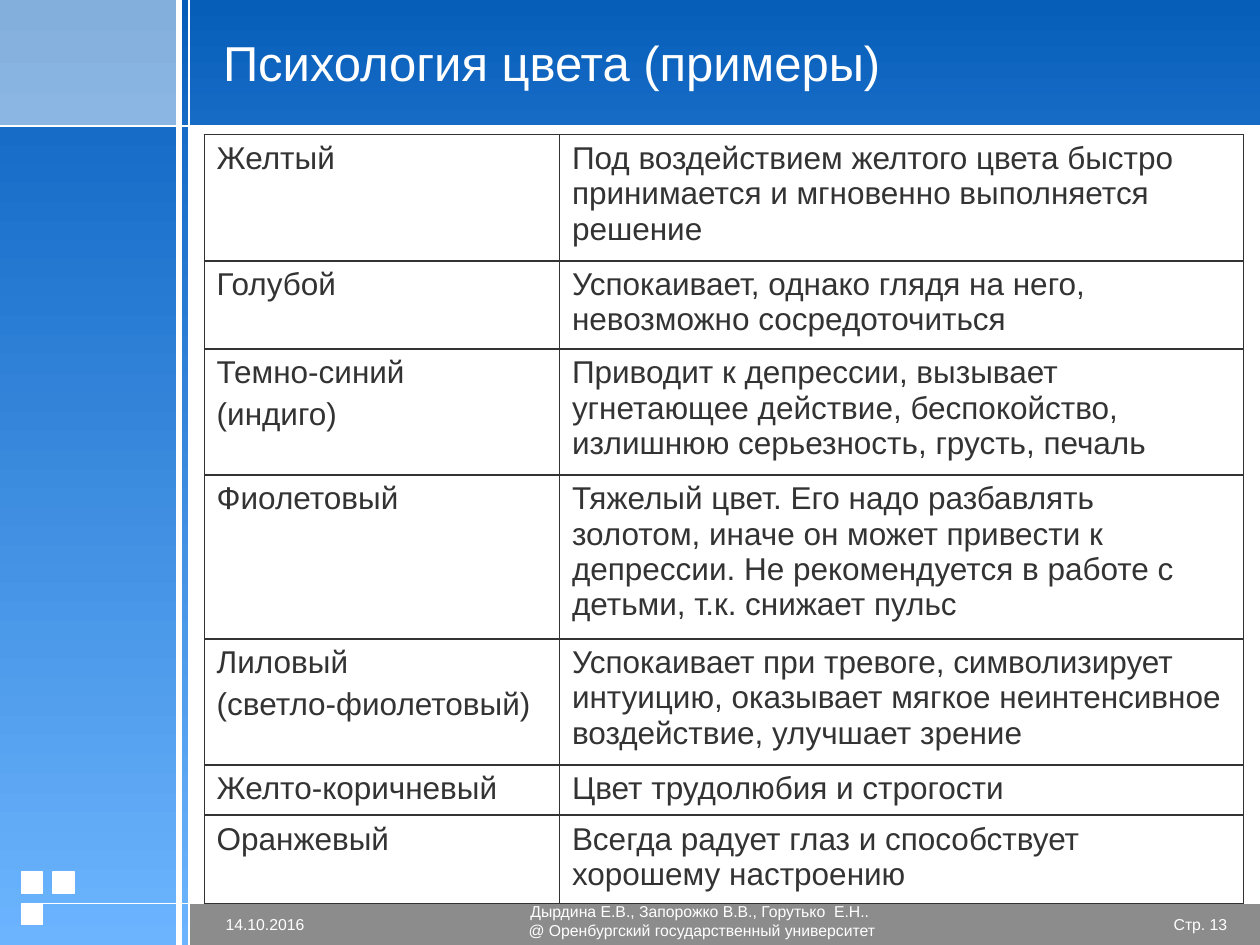
from lxml import etree
from pptx import Presentation
from pptx.dml.color import RGBColor
from pptx.enum.shapes import MSO_CONNECTOR, MSO_SHAPE
from pptx.enum.text import MSO_ANCHOR, MSO_AUTO_SIZE, PP_ALIGN
from pptx.oxml.ns import qn
from pptx.util import Inches, Pt

RECT = MSO_SHAPE.RECTANGLE
LINE = MSO_CONNECTOR.STRAIGHT
MIDDLE, TOP = MSO_ANCHOR.MIDDLE, MSO_ANCHOR.TOP
LEFT, CENTER, RIGHT = PP_ALIGN.LEFT, PP_ALIGN.CENTER, PP_ALIGN.RIGHT
NO_FIT = MSO_AUTO_SIZE.NONE

WHITE = RGBColor(0xFF, 0xFF, 0xFF)
INK = RGBColor(0x33, 0x33, 0x33)
GRAY = RGBColor(0x8C, 0x8C, 0x8C)
PALE = RGBColor(0xBD, 0xE0, 0xFF)
CORNER = (RGBColor(0x83, 0xAF, 0xDC), RGBColor(0x8B, 0xB6, 0xE3))
SIDE = (RGBColor(0x16, 0x6C, 0xC7), RGBColor(0x6C, 0xB4, 0xFE))
HEAD = (RGBColor(0x06, 0x5E, 0xB8), RGBColor(0x16, 0x6B, 0xC5))

FONT = "Arial"
WIDE, HIGH = 10, 7.5
# Grid lines of the frame: side bar, header and footer
BAR, EDGE, TOP_Y, FOOT = 1.42, 1.5, 1, 7.17
TILE, STEP = 0.17, 0.25
COLS = (2.82, 5.43)
ROWS = (
    (1, "Желтый", "Под воздействием желтого цвета быстро принимается и "
     "мгновенно выполняется решение"),
    (0.7, "Голубой", "Успокаивает, однако глядя на него, невозможно "
     "сосредоточиться"),
    (1, "Темно-синий\n(индиго)", "Приводит к депрессии, вызывает угнетающее "
     "действие, беспокойство, излишнюю серьезность, грусть, печаль"),
    (1.3, "Фиолетовый", "Тяжелый цвет. Его надо разбавлять золотом, иначе он "
     "может привести к депрессии. Не рекомендуется в работе с детьми, "
     "т.к. снижает пульс"),
    (1, "Лиловый\n(светло-фиолетовый)", "Успокаивает при тревоге, "
     "символизирует интуицию, оказывает мягкое неинтенсивное воздействие, "
     "улучшает зрение"),
    (0.4, "Желто-коричневый", "Цвет трудолюбия и строгости"),
    (0.7, "Оранжевый", "Всегда радует глаз и способствует хорошему настроению"),
)


def box(x, y, w, h):
    return [Inches(v) for v in (x, y, w, h)]


def write(frame, text, size, color, align=LEFT, gap=0):
    frame.word_wrap = True
    for i, line in enumerate(text.split("\n")):
        para = frame.add_paragraph() if i else frame.paragraphs[0]
        para.alignment = align
        para.space_before = Pt(gap)
        run = para.add_run()
        run.text = line
        run.font.name = FONT
        run.font.size = Pt(size)
        run.font.color.rgb = color


def panel(slide, place, color, edge=None):
    """Plain rectangle; a pair of colours makes a downward gradient."""
    shape = slide.shapes.add_shape(RECT, *box(*place))
    shape.shadow.inherit = False
    if isinstance(color, RGBColor):
        shape.fill.solid()
        shape.fill.fore_color.rgb = color
    else:
        shape.fill.gradient()
        shape.fill.gradient_angle = 270
        for stop, tone in zip(shape.fill.gradient_stops, color):
            stop.color.rgb = tone
    if edge:
        shape.line.color.rgb = edge
        shape.line.width = Pt(0.75)
    else:
        shape.line.fill.background()


def rule(slide, ends, width):
    line = slide.shapes.add_connector(LINE, *box(*ends))
    line.line.color.rgb = WHITE
    line.line.width = Pt(width)
    etree.SubElement(line.element.spPr, qn("a:effectLst"))


def label(slide, place, text, align):
    frame = slide.shapes.add_textbox(*box(*place)).text_frame
    frame.margin_left = frame.margin_right = 0
    frame.margin_top = frame.margin_bottom = 0
    frame.vertical_anchor = MIDDLE
    write(frame, text, 9, WHITE, align)


def border(cell, widths):
    props = cell._tc.get_or_add_tcPr()
    for side, width in zip("LRTB", widths):
        line = etree.SubElement(props, qn("a:ln" + side), w=str(Pt(width)))
        fill = etree.SubElement(line, qn("a:solidFill"))
        etree.SubElement(fill, qn("a:srgbClr"), val=str(INK))


def color_table(slide):
    place = box(1.62, 1.07, sum(COLS), sum(row[0] for row in ROWS))
    table = slide.shapes.add_table(len(ROWS), len(COLS), *place).table
    table.first_row = table.horz_banding = False
    for col, width in zip(table.columns, COLS):
        col.width = Inches(width)
    last = len(ROWS) - 1
    for r, (height, *texts) in enumerate(ROWS):
        table.rows[r].height = Inches(height)
        for c, text in enumerate(texts):
            cell = table.cell(r, c)
            # Thin lines outside, thicker lines inside
            outer = (c == 0, c == 1, r == 0, r == last)
            border(cell, [0.5 if out else 1 for out in outer])
            cell.fill.background()
            cell.vertical_anchor = TOP
            write(cell.text_frame, text, 18, INK, gap=3.6)


def backdrop(slide):
    slide.background.fill.solid()
    slide.background.fill.fore_color.rgb = PALE
    # Panels
    panel(slide, (EDGE, TOP_Y, WIDE - EDGE, FOOT - TOP_Y), WHITE)
    panel(slide, (EDGE, FOOT, WIDE - EDGE, HIGH - FOOT), GRAY)
    panel(slide, (0, 0, EDGE, TOP_Y), CORNER)
    panel(slide, (0, TOP_Y, EDGE, HIGH - TOP_Y), SIDE)
    panel(slide, (BAR, 0, WIDE - BAR, TOP_Y), HEAD)
    # Corner tiles
    for col, row in ((0, 1), (0, 0), (1, 0)):
        panel(slide, (TILE + col * STEP, 6.92 + row * STEP, TILE, TILE),
              WHITE, WHITE)
    # Dividing lines
    rule(slide, (EDGE, 0, EDGE, HIGH), 1)
    rule(slide, (BAR, 0, BAR, HIGH), 3)
    rule(slide, (WIDE, TOP_Y, 0, TOP_Y), 1)
    rule(slide, (WIDE, FOOT, TILE, FOOT), 1)


def heading(slide, text):
    title = slide.shapes.title
    title.left, title.top, title.width, title.height = box(1.67, 0.08, 8.17, 0.83)
    frame = title.text_frame
    frame.auto_size = NO_FIT
    frame.vertical_anchor = MIDDLE
    write(frame, text, 28, WHITE)
    # Bring the title in front of the panels
    title.element.getparent().append(title.element)


def main():
    deck = Presentation()
    deck.slide_width, deck.slide_height = Inches(WIDE), Inches(HIGH)
    slide = deck.slides.add_slide(deck.slide_layouts[5])
    backdrop(slide)
    # Footer
    label(slide, (9.17, 7.25, 0.57, 0.17), "Стр. 13", RIGHT)
    label(slide, (1.79, 7.25, 1.21, 0.17), "14.10.2016", LEFT)
    label(slide, (2.72, 7, 5.7, 0.61),
          "Дырдина Е.В., Запорожко В.В., Горутько  Е.Н.. \n"
          "@ Оренбургский государственный университет", CENTER)
    # Content
    heading(slide, "Психология цвета (примеры)")
    color_table(slide)
    deck.save("out.pptx")


if __name__ == "__main__":
    main()
